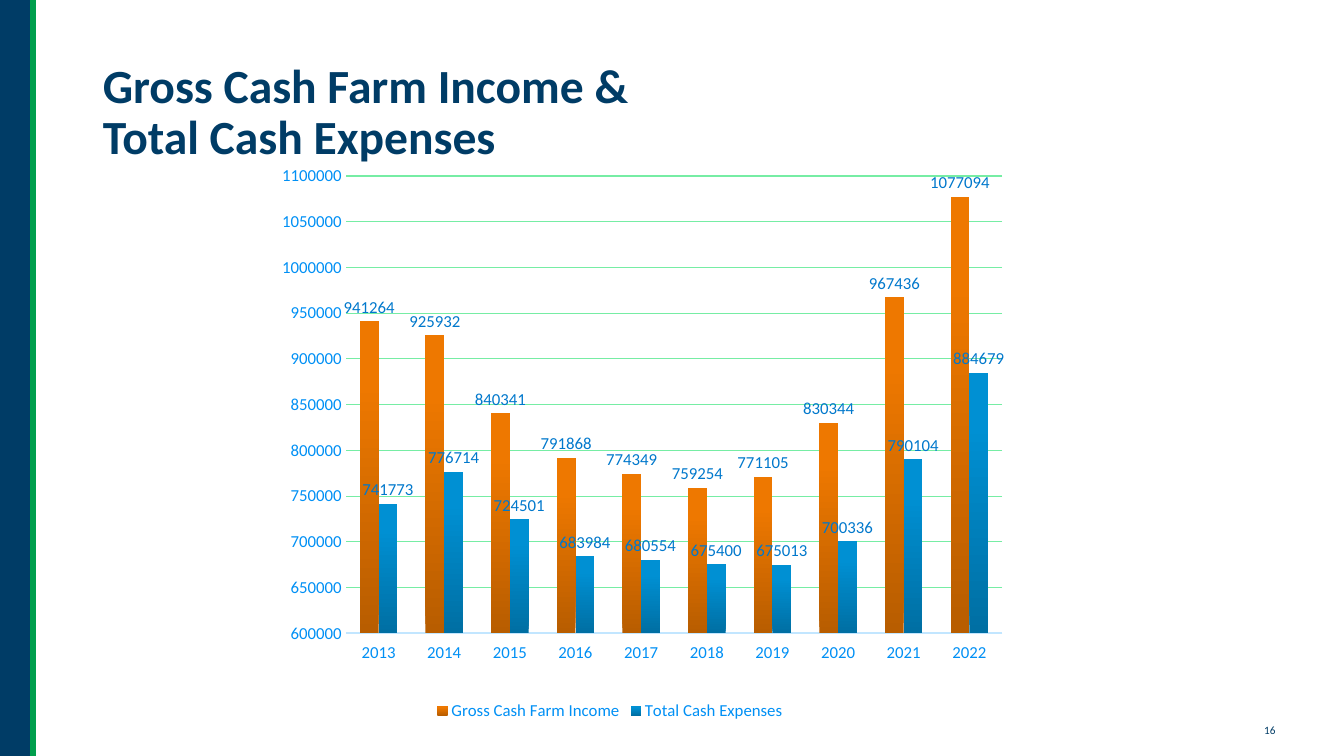
from lxml import etree
from pptx import Presentation
from pptx.chart.data import CategoryChartData
from pptx.dml.color import RGBColor
from pptx.enum.chart import (XL_CHART_TYPE, XL_LABEL_POSITION, XL_LEGEND_POSITION,
                             XL_TICK_LABEL_POSITION, XL_TICK_MARK)
from pptx.enum.shapes import MSO_CONNECTOR, MSO_SHAPE
from pptx.enum.text import MSO_ANCHOR, MSO_AUTO_SIZE, PP_ALIGN
from pptx.oxml import parse_xml
from pptx.oxml.ns import nsdecls, qn
from pptx.util import Inches, Pt

CLUSTERED = XL_CHART_TYPE.COLUMN_CLUSTERED
OUTSIDE_END = XL_LABEL_POSITION.OUTSIDE_END
BOTTOM = XL_LEGEND_POSITION.BOTTOM
LOW = XL_TICK_LABEL_POSITION.LOW
NO_TICK = XL_TICK_MARK.NONE

NAVY = RGBColor(0x00, 0x3C, 0x66)
GREEN = RGBColor(0x00, 0x9F, 0x4D)
AXIS_BLUE = RGBColor(0x00, 0x90, 0xF5)
LABEL_BLUE = RGBColor(0x00, 0x78, 0xCC)
PALE_BLUE = RGBColor(0xC2, 0xE6, 0xFF)
GRID_GREEN = RGBColor(0x76, 0xED, 0xA4)
FONT = "Calibri"

# Content
TITLE_LINES = ["Gross Cash Farm Income & ", "Total Cash Expenses"]
PAGE_NUMBER = "16"
YEARS = [str(year) for year in range(2013, 2023)]
# name, values, gradient stops (percent, colour) from the foot of a column up
SERIES = [
    ("Gross Cash Farm Income",
     (941264, 925932, 840341, 791868, 774349, 759254, 771105, 830344, 967436, 1077094),
     ((0, "B85D00"), (80, "EE7800"), (100, "EF7900"))),
    ("Total Cash Expenses",
     (741773, 776714, 724501, 683984, 680554, 675400, 675013, 700336, 790104, 884679),
     ((0, "006FA3"), (80, "0090D3"), (100, "0091D4"))),
]
AXIS_MIN, AXIS_MAX, AXIS_STEP = 600000, 1100000, 50000
PLOT_AREA = {"x": 0.17, "y": 0.04, "w": 0.82, "h": 0.8}


def set_font(font, size, color, bold=False):
    font.name, font.size, font.bold = FONT, Pt(size), bold
    font.color.rgb = color


def fill_upward(series, stops):
    gradient = "".join(f'<a:gs pos="{percent * 1000}"><a:srgbClr val="{color}"/></a:gs>'
                       for percent, color in stops)
    series._element.get_or_add_spPr().append(parse_xml(
        f'<a:gradFill {nsdecls("a")} rotWithShape="1"><a:gsLst>{gradient}</a:gsLst>'
        '<a:lin ang="16200000" scaled="0"/></a:gradFill>'))


def place_plot(chart, area):
    plot_area = chart._chartSpace.chart.plotArea
    for old in plot_area.findall(qn("c:layout")):
        plot_area.remove(old)
    modes = '<c:layoutTarget val="inner"/><c:xMode val="edge"/><c:yMode val="edge"/>'
    sizes = "".join(f'<c:{key} val="{value}"/>' for key, value in area.items())
    plot_area.insert(0, parse_xml(f'<c:layout {nsdecls("c")}><c:manualLayout>'
                                  f'{modes}{sizes}</c:manualLayout></c:layout>'))


prs = Presentation()
prs.slide_width, prs.slide_height = Inches(13.33), Inches(7.5)
slide = prs.slides.add_slide(prs.slide_layouts[5])
shapes = slide.shapes

# Left edge: navy band and green rule
band = shapes.add_shape(MSO_SHAPE.RECTANGLE, 0, 0, Inches(0.33), prs.slide_height)
band.shadow.inherit = False
band.fill.solid()
band.fill.fore_color.rgb = NAVY
band.line.fill.background()
rule = shapes.add_connector(MSO_CONNECTOR.STRAIGHT, Inches(0.33), 0,
                            Inches(0.33), prs.slide_height)
rule.line.color.rgb = GREEN
rule.line.width = Pt(4.5)
etree.SubElement(rule._element.spPr, qn("a:effectLst"))

# Title
title = shapes.title
title.left, title.top = Inches(0.92), Inches(0.4)
title.width, title.height = Inches(11.5), Inches(1.45)
frame = title.text_frame
frame.auto_size = MSO_AUTO_SIZE.NONE
frame.vertical_anchor = MSO_ANCHOR.MIDDLE
heading = frame.paragraphs[0]
heading.add_run().text = TITLE_LINES[0]
heading.add_line_break()
heading.add_run().text = TITLE_LINES[1]
heading.alignment = PP_ALIGN.LEFT
heading.line_spacing = 0.9
set_font(heading.font, 34, NAVY, bold=True)

# Income and expenses chart
data = CategoryChartData()
data.categories = YEARS
for name, values, _ in SERIES:
    data.add_series(name, values)
chart = shapes.add_chart(CLUSTERED, Inches(2.08), Inches(1.52),
                         Inches(7.94), Inches(5.67), data).chart
chart.has_title = False
set_font(chart.font, 10, NAVY)
place_plot(chart, PLOT_AREA)

plot = chart.plots[0]
plot.gap_width, plot.overlap = 150, 0
plot.vary_by_categories = False
for series, (_, _, stops) in zip(plot.series, SERIES):
    fill_upward(series, stops)
    labels = series.data_labels
    labels.show_value = True
    labels.position = OUTSIDE_END
    set_font(labels.font, 12, LABEL_BLUE)

years_axis, value_axis = chart.category_axis, chart.value_axis
for axis in (years_axis, value_axis):
    axis.major_tick_mark = axis.minor_tick_mark = NO_TICK
    set_font(axis.tick_labels.font, 12, AXIS_BLUE)
years_axis.tick_label_position = LOW
years_axis.format.line.color.rgb = PALE_BLUE
years_axis.format.line.width = Pt(1)
value_axis.minimum_scale, value_axis.maximum_scale = AXIS_MIN, AXIS_MAX
value_axis.major_unit = AXIS_STEP
value_axis.format.line.fill.background()
grid = value_axis.major_gridlines.format.line
grid.color.rgb = GRID_GREEN
grid.width = Pt(0.75)

chart.has_legend = True
chart.legend.position = BOTTOM
chart.legend.include_in_layout = False
set_font(chart.legend.font, 12, AXIS_BLUE)

# Page number
page_box = shapes.add_textbox(Inches(12.44), Inches(7.13), Inches(0.34), Inches(0.24))
page_box.text_frame.text = PAGE_NUMBER
set_font(page_box.text_frame.paragraphs[0].font, 8, NAVY)

prs.save("out.pptx")
